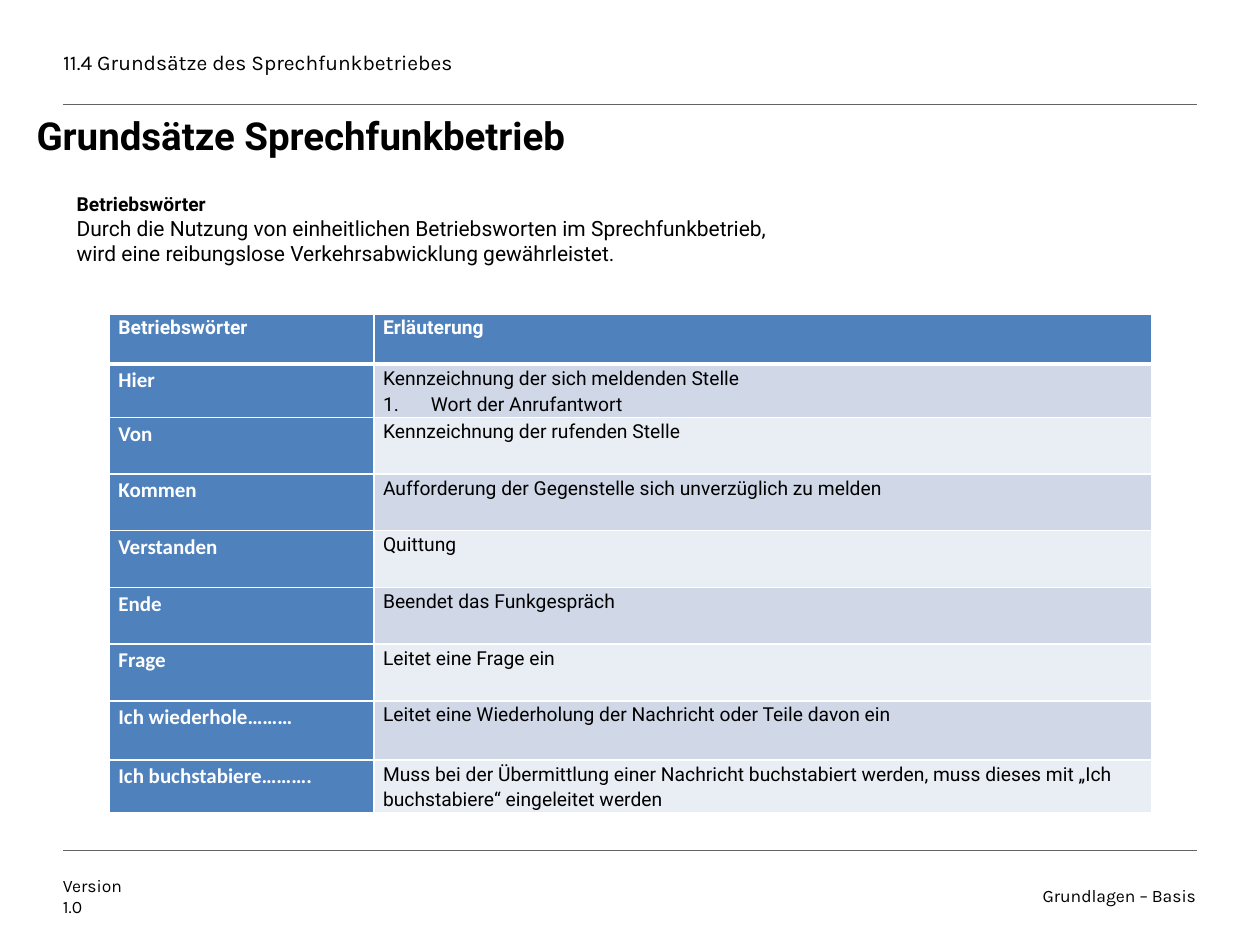
from dataclasses import dataclass

from lxml import etree
from pptx import Presentation
from pptx.dml.color import RGBColor
from pptx.enum import shapes, text
from pptx.oxml import ns
from pptx.util import Inches, Pt


@dataclass(frozen=True)
class Theme:
    """Colours, fonts and type sizes of the slide."""
    ink: str = "000000"
    paper: str = "FFFFFF"
    rule: str = "646464"
    head: str = "4F81BD"
    bands: tuple = ("D0D8E8", "E9EDF4")
    body: str = "Roboto"
    frame: str = "Karla"
    term: str = "Calibri"
    title: int = 22
    large: int = 12
    small: int = 11
    foot: int = 10


T = Theme()
WORDS = [
    ("Hier", ["Kennzeichnung der sich meldenden Stelle", "Wort der Anrufantwort"], 0.41),
    ("Von", ["Kennzeichnung der rufenden Stelle"], 0.45),
    ("Kommen", ["Aufforderung der Gegenstelle sich unverzüglich zu melden"], 0.45),
    ("Verstanden", ["Quittung"], 0.45),
    ("Ende", ["Beendet das Funkgespräch"], 0.45),
    ("Frage", ["Leitet eine Frage ein"], 0.45),
    ("Ich wiederhole………", ["Leitet eine Wiederholung der Nachricht oder Teile davon ein"], 0.47),
    ("Ich buchstabiere……….", ["Muss bei der Übermittlung einer Nachricht buchstabiert werden, "
                              "muss dieses mit „Ich buchstabiere“ eingeleitet werden"], 0.4),
]


def inches(box):
    """Turn a box of numbers into lengths."""
    return [Inches(n) for n in box]


def write(para, words, size, face=T.body, color=T.ink, bold=False):
    """Add one formatted run to a paragraph."""
    run = para.add_run()
    run.text = words
    font = run.font
    font.size, font.name, font.bold = Pt(size), face, bold
    font.color.rgb = RGBColor.from_string(color)


def paras(frame, count):
    """Return the first paragraph and as many new ones as needed."""
    return [frame.paragraphs[0]] + [frame.add_paragraph() for _ in range(count - 1)]


def trim(frame, anchor):
    """Wrap a text frame, remove its margins and anchor it."""
    frame.word_wrap = True
    frame.margin_left = frame.margin_right = frame.margin_top = frame.margin_bottom = 0
    frame.vertical_anchor = anchor


def add_label(slide, box, lines, size, align=text.PP_ALIGN.LEFT):
    """Place a header or footer label."""
    frame = slide.shapes.add_textbox(*inches(box)).text_frame
    trim(frame, text.MSO_ANCHOR.MIDDLE)
    for para, line in zip(paras(frame, len(lines)), lines):
        para.alignment = align
        write(para, line, size, T.frame)


def add_rule(slide, left, top, width):
    """Draw a thin horizontal rule."""
    ends = inches((left, top, left + width, top))
    rule = slide.shapes.add_connector(shapes.MSO_CONNECTOR.STRAIGHT, *ends)
    rule.line.width = Pt(0.25)
    rule.line.color.rgb = RGBColor.from_string(T.rule)
    etree.SubElement(rule._element.spPr, ns.qn("a:effectLst"))


def add_title(slide, box, words):
    """Move and fill the title placeholder."""
    title = slide.shapes.title
    title.left, title.top, title.width, title.height = inches(box)
    frame = title.text_frame
    trim(frame, text.MSO_ANCHOR.TOP)
    frame.auto_size = text.MSO_AUTO_SIZE.NONE
    para = frame.paragraphs[0]
    para.alignment = text.PP_ALIGN.LEFT
    para.line_spacing = Pt(24)
    write(para, words, T.title, bold=True)


def add_intro(slide, box, head, lines):
    """Place the bold lead and the sentence under it."""
    shape = slide.shapes.add_shape(shapes.MSO_SHAPE.RECTANGLE, *inches(box))
    shape.shadow.inherit = False
    shape.fill.solid()
    shape.fill.fore_color.rgb = RGBColor.from_string(T.paper)
    shape.line.fill.background()
    frame = shape.text_frame
    frame.word_wrap = True
    frame.vertical_anchor = text.MSO_ANCHOR.MIDDLE
    first, *rest = paras(frame, len(lines) + 1)
    write(first, head, T.small, bold=True)
    for para, line in zip(rest, lines):
        write(para, line, T.large)
    for para in frame.paragraphs:
        para.alignment = text.PP_ALIGN.LEFT


def edge(cell, row):
    """Give a cell white borders, thicker below the header."""
    props = cell._tc.get_or_add_tcPr()
    for side in "LRTB":
        wide = (row, side) in ((0, "B"), (1, "T"))
        line = etree.SubElement(props, ns.qn(f"a:ln{side}"), w=str(Pt(3 if wide else 1)))
        fill = etree.SubElement(line, ns.qn("a:solidFill"))
        etree.SubElement(fill, ns.qn("a:srgbClr"), val=T.paper)


def number(para):
    """Number a paragraph with a hanging indent."""
    props = para._p.get_or_add_pPr()
    props.set("marL", str(Inches(0.38)))
    props.set("indent", str(Inches(-0.38)))
    etree.SubElement(props, ns.qn("a:buAutoNum"), type="arabicPeriod")


def fill_cell(cell, row, lines, fill, **style):
    """Colour a cell and write its lines, numbering those after the first."""
    edge(cell, row)
    cell.fill.solid()
    cell.fill.fore_color.rgb = RGBColor.from_string(fill)
    cell.margin_left = cell.margin_right = Inches(0.07)
    cell.margin_top = cell.margin_bottom = 0
    for i, (para, line) in enumerate(zip(paras(cell.text_frame, len(lines)), lines)):
        para.line_spacing = 1.15
        if i:
            number(para)
        write(para, line, **style)


def add_words(slide, box, heads, words):
    """Build the table of procedure words."""
    table = slide.shapes.add_table(len(words) + 1, 2, *inches(box)).table
    for col, width in zip(table.columns, (2.1, box[2] - 2.1)):
        col.width = Inches(width)
    for row, high in zip(table.rows, [0.4] + [item[2] for item in words]):
        row.height = Inches(high)
    light = dict(color=T.paper, bold=True)
    for col, head in enumerate(heads):
        fill_cell(table.cell(0, col), 0, [head], T.head, size=T.small, **light)
    for row, (term, lines, _) in enumerate(words, 1):
        fill_cell(table.cell(row, 0), row, [term], T.head, size=T.large, face=T.term, **light)
        fill_cell(table.cell(row, 1), row, lines, T.bands[(row - 1) % 2], size=T.small)


def main():
    """Build and save the slide."""
    deck = Presentation()
    deck.slide_width, deck.slide_height = Inches(10), Inches(7.5)
    slide = deck.slides.add_slide(deck.slide_layouts[5])
    for top in (0.83, 6.75):
        add_rule(slide, 0.5, top, 9)
    add_label(slide, (0.5, 0.33, 6.08, 0.33), ["11.4 Grundsätze des Sprechfunkbetriebes"], T.large)
    add_label(slide, (0.5, 6.89, 0.56, 0.44), ["Version", "1.0"], T.foot)
    add_label(slide, (8.07, 6.89, 1.42, 0.44), ["Grundlagen – Basis"], T.foot, text.PP_ALIGN.RIGHT)
    add_words(slide, (0.87, 2.49, 8.27, 3.93), ("Betriebswörter", "Erläuterung"), WORDS)
    add_title(slide, (0.29, 0.92, 7.38, 0.67), "Grundsätze Sprechfunkbetrieb")
    add_intro(slide, (0.51, 1.47, 8.35, 0.69), "Betriebswörter", [
        "Durch die Nutzung von einheitlichen Betriebsworten im Sprechfunkbetrieb,",
        "wird eine reibungslose Verkehrsabwicklung gewährleistet."])
    deck.save("out.pptx")


if __name__ == "__main__":
    main()
